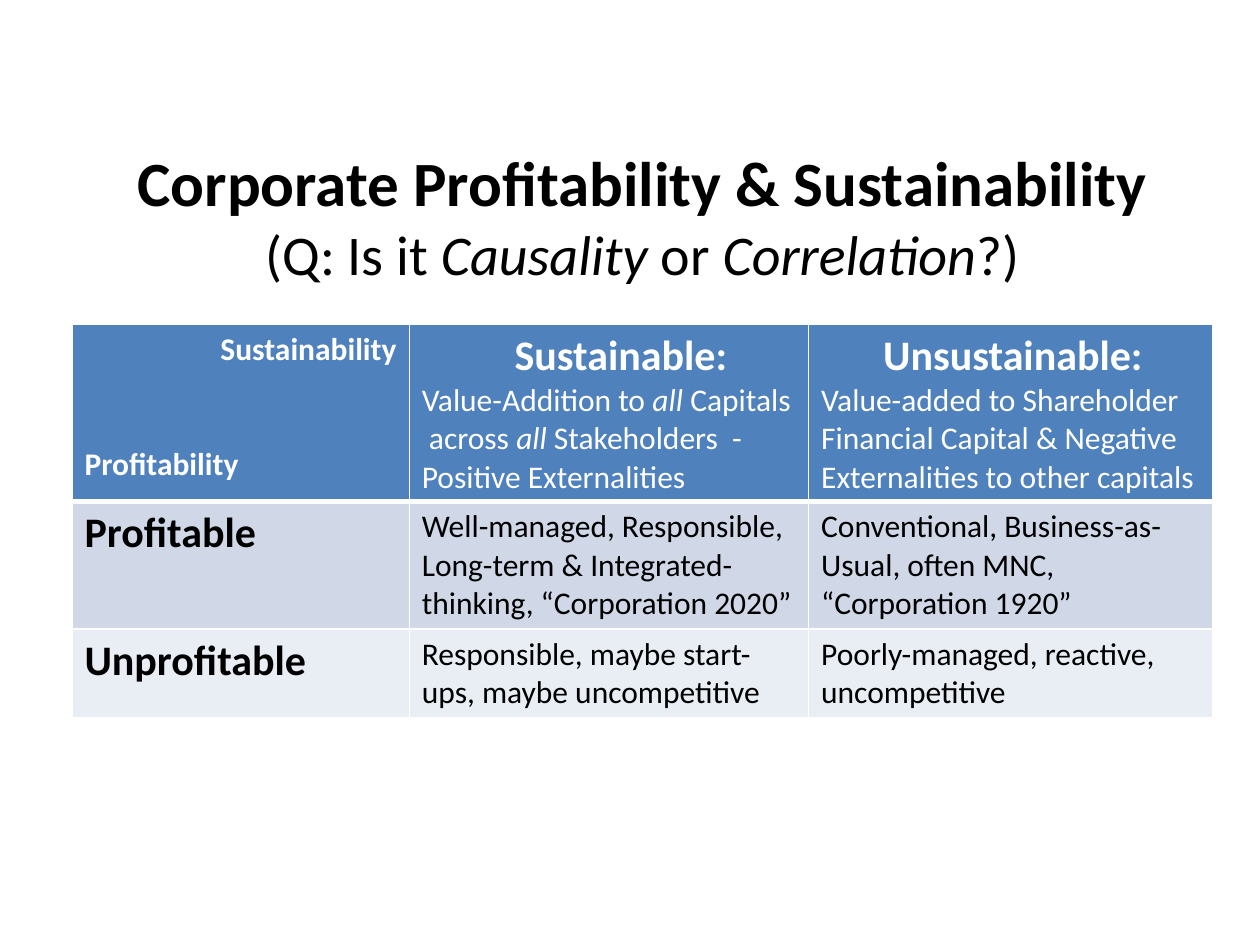
import dataclasses
import typing

import lxml.etree
import pptx
import pptx.dml.color
import pptx.enum.text
import pptx.oxml.ns
import pptx.util

Cm = pptx.util.Cm
Pt = pptx.util.Pt
RGBColor = pptx.dml.color.RGBColor
Align = pptx.enum.text.PP_ALIGN

WHITE = RGBColor(0xFF, 0xFF, 0xFF)
BLACK = RGBColor(0x00, 0x00, 0x00)
HEADER_BLUE = RGBColor(0x4F, 0x81, 0xBD)
BAND_DARK = RGBColor(0xD0, 0xD8, 0xE8)
BAND_LIGHT = RGBColor(0xE9, 0xED, 0xF4)

FONT = "Calibri"
LEFT, WIDTH = Cm(1.45), Cm(23)
COLUMN_WIDTHS = (Cm(6.8), Cm(8.05), Cm(8.15))
THIN, THICK = Pt(1), Pt(3)


@dataclasses.dataclass(frozen=True)
class Span:
    text: str
    size: int = 18
    bold: bool = False
    italic: bool = False
    new_line: bool = False


@dataclasses.dataclass(frozen=True)
class Para:
    spans: tuple[Span, ...]
    align: typing.Any = Align.LEFT
    space_before: int = 0
    indent: int = 0


@dataclasses.dataclass(frozen=True)
class Row:
    height: int
    fill: RGBColor
    color: RGBColor
    top: int
    bottom: int
    cells: tuple[tuple[Para, ...], ...]


def plain(text: str) -> tuple[Para, ...]:
    return (Para((Span(text),)),)


def label(text: str) -> tuple[Para, ...]:
    return (Para((Span(text, 24, bold=True),)),)


def corner(text: str, **layout: typing.Any) -> Para:
    return Para((Span(text, bold=True),), **layout)


def heading(text: str, indent: int) -> Para:
    return Para((Span(text, 24, bold=True),), indent=indent)


TITLE = Para((
    Span("Corporate Profitability & Sustainability", 36, bold=True),
    Span("(Q: Is it ", 32, new_line=True),
    Span("Causality ", 32, italic=True),
    Span("or", 32),
    Span(" Correlation", 32, italic=True),
    Span("?)", 32),
), Align.CENTER)

ROWS = (
    Row(Cm(3.58), HEADER_BLUE, WHITE, THIN, THICK, (
        (corner("Sustainability", align=Align.RIGHT),
         corner("Profitability", space_before=44)),
        (heading("Sustainable:", Cm(1.87)),
         Para((Span("Value-Addition to"), Span(" all ", italic=True),
               Span("Capitals  across "), Span("all", italic=True),
               Span(" Stakeholders  - Positive Externalities")))),
        (heading("Unsustainable:", Cm(1.25)),
         *plain("Value-added to Shareholder Financial Capital & Negative "
                "Externalities to other capitals")),
    )),
    Row(Cm(2.57), BAND_DARK, BLACK, THICK, THIN, (
        label("Profitable"),
        plain("Well-managed, Responsible, Long-term & Integrated-thinking, "
              "“Corporation 2020”"),
        plain("Conventional, Business-as-Usual, often MNC, “Corporation 1920”"),
    )),
    Row(Cm(1.79), BAND_LIGHT, BLACK, THIN, THIN, (
        label("Unprofitable"),
        plain("Responsible, maybe start-ups, maybe uncompetitive"),
        plain("Poorly-managed, reactive, uncompetitive"),
    )),
)


def write_paras(frame: typing.Any, paras: tuple[Para, ...], color: RGBColor) -> None:
    for index, para in enumerate(paras):
        paragraph = frame.add_paragraph() if index else frame.paragraphs[0]
        paragraph.alignment = para.align
        if para.space_before:
            paragraph.space_before = Pt(para.space_before)
        if para.indent:
            properties = paragraph._p.get_or_add_pPr()
            properties.set("marL", str(int(para.indent)))
            properties.set("indent", "0")
        for span in para.spans:
            if span.new_line:
                paragraph.add_line_break()
            run = paragraph.add_run()
            run.text = span.text
            style = {"name": FONT, "size": Pt(span.size),
                     "bold": span.bold, "italic": span.italic}
            for name, value in style.items():
                setattr(run.font, name, value)
            run.font.color.rgb = color


def set_borders(cell: typing.Any, widths: dict[str, int]) -> None:
    qn = pptx.oxml.ns.qn
    properties = cell._tc.get_or_add_tcPr()
    for side, width in widths.items():
        line = lxml.etree.SubElement(properties, qn(f"a:ln{side}"), w=str(int(width)))
        fill = lxml.etree.SubElement(line, qn("a:solidFill"))
        lxml.etree.SubElement(fill, qn("a:srgbClr"), val=str(WHITE))


def add_title(page: typing.Any) -> None:
    box = page.shapes.add_textbox(LEFT, Cm(2.54), WIDTH, Cm(3.6))
    frame = box.text_frame
    frame.word_wrap = True
    frame.vertical_anchor = pptx.enum.text.MSO_ANCHOR.MIDDLE
    write_paras(frame, (TITLE,), BLACK)


def add_matrix(page: typing.Any) -> None:
    height = sum(row.height for row in ROWS)
    table = page.shapes.add_table(
        len(ROWS), len(COLUMN_WIDTHS), LEFT, Cm(6.53), WIDTH, height).table
    for column, width in zip(table.columns, COLUMN_WIDTHS):
        column.width = width
    for table_row, row in zip(table.rows, ROWS):
        table_row.height = row.height
        for cell, paras in zip(table_row.cells, row.cells):
            # Borders precede the fill in the cell properties
            set_borders(cell, {"L": THIN, "R": THIN, "T": row.top, "B": row.bottom})
            cell.fill.solid()
            cell.fill.fore_color.rgb = row.fill
            write_paras(cell.text_frame, paras, row.color)


def main() -> None:
    deck = pptx.Presentation()
    deck.slide_width, deck.slide_height = Cm(25.4), Cm(19.05)
    page = deck.slides.add_slide(deck.slide_layouts[6])
    # Title
    add_title(page)
    # Profitability by sustainability
    add_matrix(page)
    deck.save("out.pptx")


if __name__ == "__main__":
    main()
